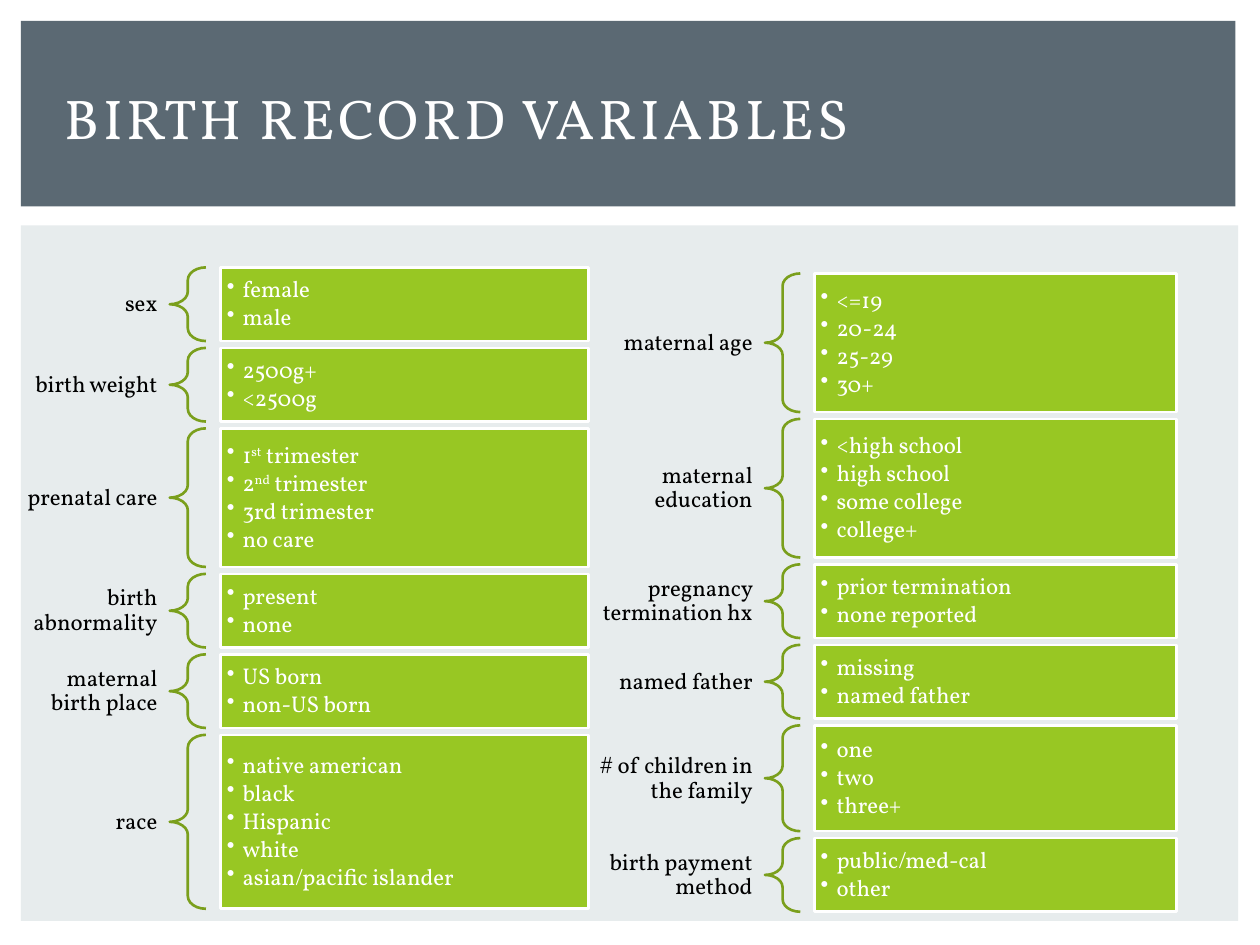
from dataclasses import dataclass

from lxml import etree
from pptx import Presentation
from pptx import util as u
from pptx.dml.color import RGBColor
from pptx.enum import shapes, text
from pptx.oxml.ns import qn

Pt = u.Pt


@dataclass(frozen=True)
class Theme:
    font: str = "Vollkorn"
    title_size: float = 32
    body_size: float = 13
    banner: str = "5B6973"
    panel: str = "E7ECED"
    box: str = "98C723"
    brace: str = "7A9F1C"
    light: str = "FFFFFF"
    dark: str = "000000"
    line: float = 1.5


THEME = Theme()
BOX_HEIGHTS = {2: 42.1, 3: 60.5, 4: 79.2, 5: 99.4}
GAP = 3.9
LABEL_HEIGHT = 37.5
SUPERSCRIPT = "^"

LEFT_GROUPS = [
    ("sex", ["female", "male"]),
    ("birth weight", ["2500g+", "<2500g"]),
    ("prenatal care", ["1^st^ trimester", "2^nd^ trimester", "3rd trimester", "no care"]),
    ("birth abnormality", ["present", "none"]),
    ("maternal\vbirth place", ["US born", "non-US born"]),
    ("race", ["native american", "black", "Hispanic", "white", "asian/pacific islander"]),
]
RIGHT_GROUPS = [
    ("maternal age", ["<=19", "20-24", "25-29", "30+"]),
    ("maternal education", ["<high school", "high school", "some college", "college+"]),
    ("pregnancy termination hx", ["prior termination", "none reported"]),
    ("named father", ["missing", "named father"]),
    ("# of children in the family", ["one", "two", "three+"]),
    ("birth payment method", ["public/med-cal", "other"]),
]


def add_shape(s, kind, box, fill=None, line=None):
    sp = s.shapes.add_shape(kind, *map(Pt, box))
    sp.shadow.inherit = False
    if fill:
        sp.fill.solid()
        sp.fill.fore_color.rgb = RGBColor.from_string(fill)
    else:
        sp.fill.background()
    if line:
        sp.line.color.rgb = RGBColor.from_string(line)
        sp.line.width = Pt(THEME.line)
    else:
        sp.line.fill.background()
    return sp


def set_frame(tf, inset_x, inset_y):
    tf.word_wrap = True
    tf.vertical_anchor = text.MSO_ANCHOR.MIDDLE
    tf.margin_left = tf.margin_right = Pt(inset_x)
    tf.margin_top = tf.margin_bottom = Pt(inset_y)


def set_font(p, size, color):
    p.font.name = THEME.font
    p.font.size = Pt(size)
    p.font.color.rgb = RGBColor.from_string(color)


def add_text(s, box, words, size, color, align, inset_y=3.6):
    tf = s.shapes.add_textbox(*map(Pt, box)).text_frame
    set_frame(tf, 7.2, inset_y)
    p = tf.paragraphs[0]
    p.text = words
    p.alignment = align
    p.line_spacing = 0.9
    set_font(p, size, color)
    return p


def set_bullet(p, indent):
    pPr = p._p.get_or_add_pPr()
    pPr.set("marL", str(Pt(indent)))
    pPr.set("indent", str(-Pt(indent)))
    bullet = etree.Element(qn("a:buChar"), char="•")
    pPr.insert_element_before(bullet, "a:tabLst", "a:defRPr", "a:extLst")


def add_values(sp, values):
    tf = sp.text_frame
    set_frame(tf, 3.6, 3.6)
    for i, value in enumerate(values):
        p = tf.add_paragraph() if i else tf.paragraphs[0]
        p.alignment = text.PP_ALIGN.LEFT
        p.line_spacing = 0.9
        p.space_after = Pt(1.95)
        set_font(p, THEME.body_size, THEME.light)
        set_bullet(p, 9)
        for k, part in enumerate(value.split(SUPERSCRIPT)):
            r = p.add_run()
            r.text = part
            if k % 2:
                r._r.get_or_add_rPr().set("baseline", "30000")


def add_banner(s, box, title):
    left, top, width, height = box
    add_shape(s, shapes.MSO_SHAPE.RECTANGLE, box, THEME.banner)
    title_box = (left + 18, top + 16, width - 34, height - 23)
    p = add_text(s, title_box, title, THEME.title_size, THEME.light, text.PP_ALIGN.LEFT)
    p.runs[0]._r.get_or_add_rPr().set("spc", "200")


def add_group_column(s, box, label_width, brace_width, box_width, groups):
    left, top = box
    brace_left = left + label_width
    box_left = brace_left + brace_width * 1.4
    for label, values in groups:
        height = BOX_HEIGHTS[len(values)]
        label_box = (left, top + (height - LABEL_HEIGHT) / 2, label_width, LABEL_HEIGHT)
        add_text(s, label_box, label, THEME.body_size, THEME.dark,
                 text.PP_ALIGN.RIGHT, 2.9)
        brace = add_shape(s, shapes.MSO_SHAPE.LEFT_BRACE,
                          (brace_left, top, brace_width, height), line=THEME.brace)
        brace.adjustments[0] = 0.35
        brace.adjustments[1] = 0.5
        sp = add_shape(s, shapes.MSO_SHAPE.RECTANGLE,
                       (box_left, top, box_width, height), THEME.box, THEME.light)
        add_values(sp, values)
        top += height + GAP


def main():
    prs = Presentation()
    prs.slide_width, prs.slide_height = Pt(720), Pt(540)
    s = prs.slides.add_slide(prs.slide_layouts[6])
    add_shape(s, shapes.MSO_SHAPE.RECTANGLE, (12, 128.8, 695.5, 397.5), THEME.panel)
    add_banner(s, (12, 12, 694, 106), "BIRTH RECORD VARIABLES")
    add_group_column(s, (0, 152.8), 97, 20.7, 210.3, LEFT_GROUPS)
    add_group_column(s, (334.7, 156.3), 102.4, 20.2, 206.9, RIGHT_GROUPS)
    prs.save("out.pptx")


if __name__ == "__main__":
    main()
